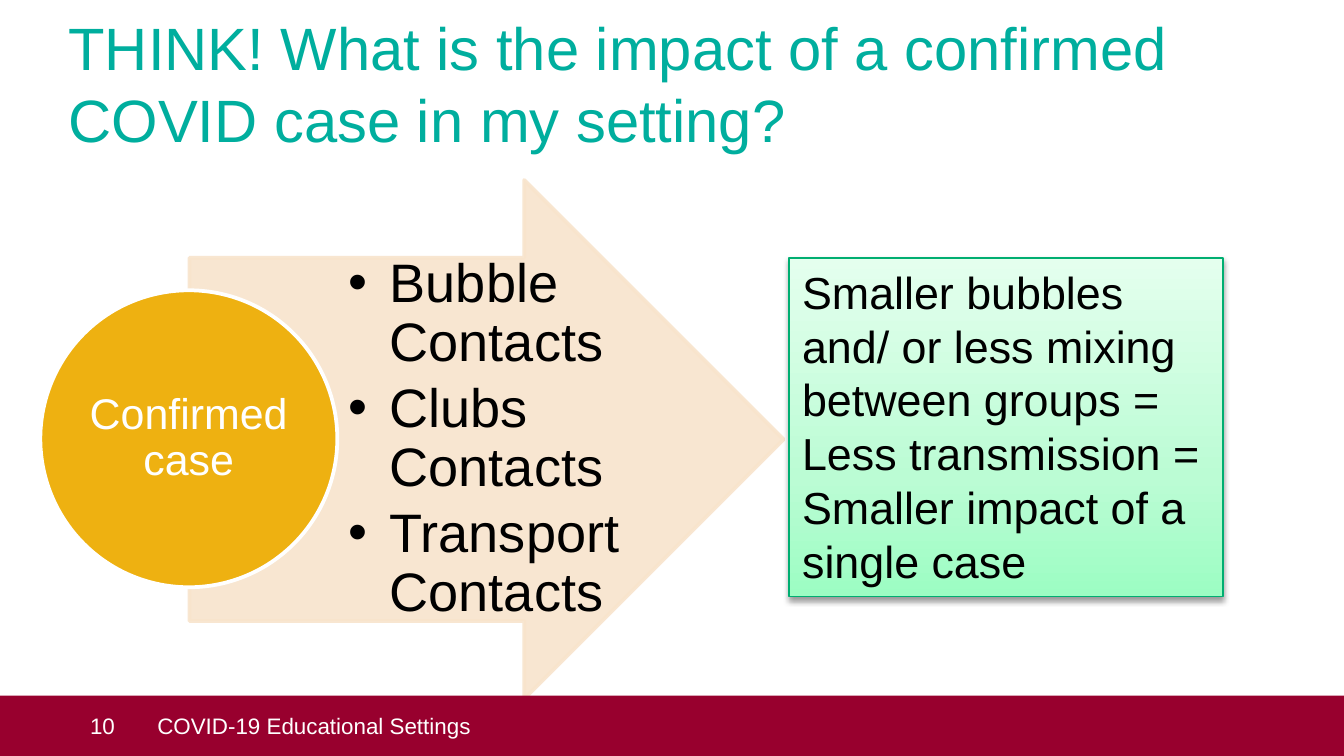
from pptx import Presentation, util as u
from pptx.dml.color import RGBColor
from pptx.enum import shapes, text
from pptx.oxml import parse_xml
from pptx.oxml.ns import nsdecls, qn
from lxml import etree

THEME = {
    "font": "Arial",
    "teal": "00AE9E", "peach": "F8E4CC", "gold": "EEB111", "wine": "98002E",
    "green": "00AE71", "black": "000000", "white": "FFFFFF",
    "mint": [(0, "9CFDC3"), (35, "BBFCD4"), (100, "E4FFEE")],
    "title_size": 32, "list_size": 29, "box_size": 24, "case_size": 23, "footer_size": 12,
}
ANCHOR, ALIGN, KIND = text.MSO_ANCHOR, text.PP_ALIGN, shapes.MSO_SHAPE
WIDTH = 10
HEIGHT = WIDTH * 9 / 16
FOOTER_HEIGHT = 0.45
FOOTER_TOP = HEIGHT - FOOTER_HEIGHT


def add_shape(kind, box, fill, line=None, width=0):
    shape = slide.shapes.add_shape(kind, *map(u.Inches, box))
    shape.shadow.inherit = False
    shape.fill.solid()
    shape.fill.fore_color.rgb = RGBColor.from_string(THEME[fill])
    if line:
        shape.line.color.rgb = RGBColor.from_string(THEME[line])
        shape.line.width = u.Pt(width)
    else:
        shape.line.fill.background()
    return shape


def write(shape, lines, size, color, insets, anchor=ANCHOR.TOP, **paragraph_format):
    """Fill a shape with one paragraph per line; insets run left, top, right, bottom."""
    frame = shape.text_frame
    frame.text = "\n".join(lines)
    frame_format = {"word_wrap": True, "auto_size": text.MSO_AUTO_SIZE.NONE,
                    "vertical_anchor": anchor}
    sides = ("margin_left", "margin_top", "margin_right", "margin_bottom")
    frame_format.update(zip(sides, map(u.Inches, insets)))
    for name, value in frame_format.items():
        setattr(frame, name, value)
    for paragraph in frame.paragraphs:
        for name, value in {"alignment": ALIGN.LEFT, **paragraph_format}.items():
            setattr(paragraph, name, value)
        for run in paragraph.runs:
            run.font.name = THEME["font"]
            run.font.size = u.Pt(THEME[size])
            run.font.color.rgb = RGBColor.from_string(THEME[color])


prs = Presentation()
prs.slide_width, prs.slide_height = u.Inches(WIDTH), u.Inches(HEIGHT)
slide = prs.slides.add_slide(prs.slide_layouts[1])
title, contacts = slide.placeholders

for placeholder, box in ((title, (0.51, 0.08, 8.78, 0.53)), (contacts, (2.51, 1.92, 2.15, 2.7))):
    for name, value in zip(("left", "top", "width", "height"), box):
        setattr(placeholder, name, u.Inches(value))

write(title, ["THINK! What is the impact of a confirmed COVID case in my setting?"],
      "title_size", "teal", (0, 0, 0, 0))

# The impact arrow lies behind the list of contacts
impact = add_shape(KIND.RIGHT_ARROW, (1.41, 1.34, 4.42, 3.86), "peach", "peach", 2)
impact.adjustments[0], impact.adjustments[1] = 0.7, 0.5
for color in impact._element.spPr.iter(qn("a:srgbClr")):
    etree.SubElement(color, qn("a:alpha"), val="90000")
slide.shapes._spTree.insert(2, impact._element)

write(contacts, [f"{group} Contacts" for group in ("Bubble", "Clubs", "Transport")],
      "list_size", "black", (0.08, 0.02, 0.04, 0.02), ANCHOR.MIDDLE,
      line_spacing=0.9, space_before=u.Pt(0), space_after=u.Pt(4.35))
for paragraph in contacts.text_frame.paragraphs:
    props = paragraph._p.get_or_add_pPr()
    props.set("marL", str(u.Inches(0.31)))
    props.set("indent", str(-u.Inches(0.31)))
    etree.SubElement(props, qn("a:buFont"), typeface=THEME["font"])
    etree.SubElement(props, qn("a:buChar"), char="•")

confirmed = add_shape(KIND.OVAL, (0.3, 2.16, 2.21, 2.21), "gold", "white", 2)
write(confirmed, ["Confirmed case"], "case_size", "white", (0.02,) * 4, ANCHOR.MIDDLE,
      alignment=ALIGN.CENTER, line_spacing=0.9)

footer = add_shape(KIND.RECTANGLE, (0, FOOTER_TOP, WIDTH, FOOTER_HEIGHT), "wine")
write(footer, ["10"], "footer_size", "white", (0.67, 0, 0.1, 0), ANCHOR.MIDDLE)
setting = slide.shapes.add_textbox(*map(u.Inches, (0.98, FOOTER_TOP, 8.82, FOOTER_HEIGHT)))
write(setting, ["COVID-19 Educational Settings"], "footer_size", "white",
      (0.19, 0, 0, 0), ANCHOR.MIDDLE)

takeaway = add_shape(KIND.RECTANGLE, (5.87, 1.92, 3.23, 2.52), "green", "green", 0.75)
write(takeaway, ["Smaller bubbles and/ or less mixing between groups =",
                 "Less transmission =",
                 "Smaller impact of a single case"],
      "box_size", "black", (0.1, 0.05, 0.1, 0.05))
stops = "".join(f'<a:gs pos="{place * 1000}"><a:srgbClr val="{color}"/></a:gs>'
                for place, color in THEME["mint"])
gradient = parse_xml(f'<a:gradFill {nsdecls("a")} rotWithShape="1"><a:gsLst>{stops}</a:gsLst>'
                     '<a:lin ang="16200000" scaled="1"/></a:gradFill>')
box_props = takeaway._element.spPr
box_props.replace(box_props.find(qn("a:solidFill")), gradient)
box_props.find(qn("a:effectLst")).append(parse_xml(
    f'<a:outerShdw {nsdecls("a")} blurRad="{u.Pt(3.1)}" dist="{u.Pt(1.6)}" dir="5400000" '
    f'rotWithShape="0"><a:srgbClr val="{THEME["black"]}"><a:alpha val="38000"/></a:srgbClr>'
    '</a:outerShdw>'))

prs.save("out.pptx")
